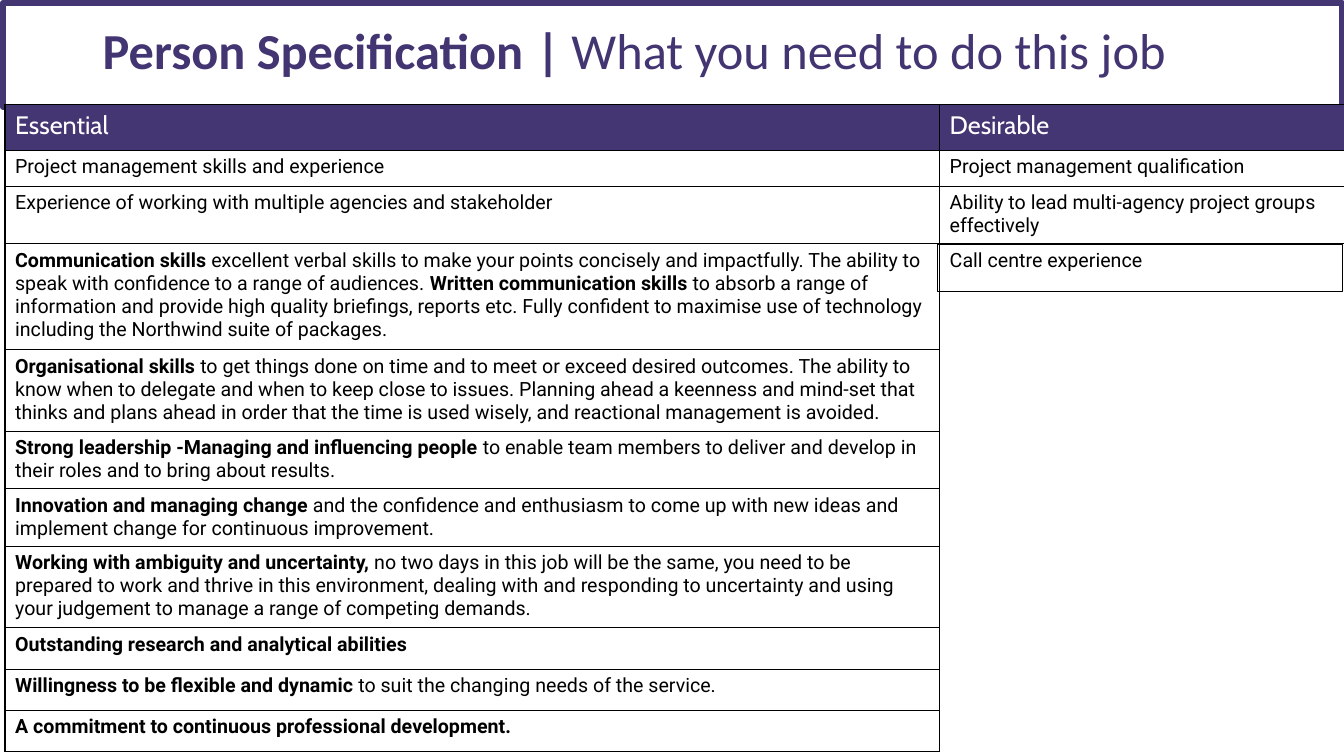
from dataclasses import dataclass

from lxml import etree
from pptx import Presentation
from pptx import util as u
from pptx.dml.color import RGBColor
from pptx.enum import shapes, text
from pptx.oxml.ns import qn


@dataclass(frozen=True)
class Theme:
    title_ink: str = "433472"
    purple: str = "443673"
    black: str = "000000"
    white: str = "FFFFFF"
    title_font: str = "Calibri"
    head_font: str = "Cabin"
    body_font: str = "Roboto"
    title_size: int = 36
    gap_size: int = 40
    head_size: int = 18
    body_size: int = 14


T = Theme()

COLUMNS = [9.27, 4.02]
ROWS = [0.45, 0.36, 0.57, 1.05, 0.81, 0.57, 0.57, 0.81, 0.41, 0.41, 0.41]
HEADINGS = ["Essential", "Desirable"]

# Each requirement is a list of (wording, bold) runs
ESSENTIAL = [
    [("Project management skills and experience", False)],
    [("Experience of working with multiple agencies and stakeholder", False)],
    [("Communication skills ", True),
     ("excellent verbal skills to make your points concisely and impactfully. "
      "The ability to speak with confidence to a range of audiences. ", False),
     ("Written communication skills ", True),
     ("to absorb a range of information and provide high quality briefings, "
      "reports etc. Fully confident to maximise use of technology including "
      "the Northwind suite of packages.", False)],
    [("Organisational skills ", True),
     ("to get things done on time and to meet or exceed desired outcomes. "
      "The ability to know when to delegate and when to keep close to issues. "
      "Planning ahead a keenness and mind-set that thinks and plans ahead in "
      "order that the time is used wisely, and reactional management is "
      "avoided.", False)],
    [("Strong leadership -Managing and influencing people ", True),
     ("to enable team members to deliver and develop in their roles and to "
      "bring about results.", False)],
    [("Innovation and managing change ", True),
     ("and the confidence and enthusiasm to come up with new ideas and "
      "implement change for continuous improvement.", False)],
    [("Working with ambiguity and uncertainty, ", True),
     ("no two days in this job will be the same, you need to be prepared to "
      "work and thrive in this environment, dealing with and responding to "
      "uncertainty and using your judgement to manage a range of competing "
      "demands.", False)],
    [("Outstanding research and analytical abilities", True)],
    [("Willingness to be flexible and dynamic ", True),
     ("to suit the changing needs of the service.", False)],
    [("A commitment to continuous professional development.", True)],
]
DESIRABLE = [
    [("Project management qualification", False)],
    [("Ability to lead multi-agency project groups effectively", False)],
    [("Call centre experience", False)],
]


def add_run(p, wording, font, size, color, bold=False):
    r = p.add_run()
    r.text = wording
    r.font.name = font
    r.font.size = u.Pt(size)
    r.font.bold = bold
    r.font.color.rgb = RGBColor.from_string(color)


def set_borders(cell, sides):
    """Draw 1 pt lines on the given sides (of LRTB) and none elsewhere."""
    tc_pr = cell._tc.get_or_add_tcPr()
    for i, side in enumerate("LRTB"):
        ln = etree.Element(qn("a:ln" + side), w=str(u.Pt(1)))
        if side in sides:
            fill = etree.SubElement(ln, qn("a:solidFill"))
            etree.SubElement(fill, qn("a:srgbClr"), val=T.black)
        else:
            etree.SubElement(ln, qn("a:noFill"))
        tc_pr.insert(i, ln)


def add_outline(slide, x, y, w, h, color, weight):
    sp = slide.shapes.add_shape(shapes.MSO_SHAPE.RECTANGLE, u.Inches(x),
                                u.Inches(y), u.Inches(w), u.Inches(h))
    sp.shadow.inherit = False
    sp.fill.background()
    sp.line.color.rgb = RGBColor.from_string(color)
    sp.line.width = u.Pt(weight)


def add_title(slide, x, y, w, h):
    sp = slide.shapes.add_textbox(u.Inches(x), u.Inches(y),
                                  u.Inches(w), u.Inches(h))
    tf = sp.text_frame
    tf.word_wrap = True
    tf.vertical_anchor = text.MSO_ANCHOR.MIDDLE
    p = tf.paragraphs[0]
    p.line_spacing = 0.9
    main = (T.title_font, T.title_size, T.title_ink)
    add_run(p, "Person Specification", *main, bold=True)
    add_run(p, " ", T.head_font, T.gap_size, T.black)
    add_run(p, "| ", *main, bold=True)
    add_run(p, "What you need to do this job", *main)


def add_criteria(slide, x, y):
    table = slide.shapes.add_table(
        len(ROWS), len(COLUMNS), u.Inches(x), u.Inches(y),
        u.Inches(sum(COLUMNS)), u.Inches(sum(ROWS))).table
    table.first_row = table.horz_banding = False
    for column, width in zip(table.columns, COLUMNS):
        column.width = u.Inches(width)
    for row, height in zip(table.rows, ROWS):
        row.height = u.Inches(height)

    for c, requirements in enumerate([ESSENTIAL, DESIRABLE]):
        # Heading
        head = table.cell(0, c)
        head.fill.solid()
        head.fill.fore_color.rgb = RGBColor.from_string(T.purple)
        set_borders(head, "LRTB")
        add_run(head.text_frame.paragraphs[0], HEADINGS[c],
                T.head_font, T.head_size, T.white)

        # Requirements; the right column is open below its second entry
        for n in range(1, len(ROWS)):
            cell = table.cell(n, c)
            cell.fill.background()
            if c == 0 or n < 3:
                set_borders(cell, "LRTB")
            else:
                set_borders(cell, "LT" if n == 3 else "L")
            if n <= len(requirements):
                for wording, bold in requirements[n - 1]:
                    add_run(cell.text_frame.paragraphs[0], wording,
                            T.body_font, T.body_size, T.black, bold)


def main():
    prs = Presentation()
    prs.slide_width, prs.slide_height = u.Inches(13.33), u.Inches(7.5)
    slide = prs.slides.add_slide(prs.slide_layouts[6])

    add_title(slide, 0.92, -0.22, 11.5, 1.45)
    # Title frame
    add_outline(slide, 0.03, 0.03, 13.28, 1.03, T.purple, 4.5)
    add_criteria(slide, 0.05, 1.04)
    # Box around the last desirable entry
    add_outline(slide, 9.3, 2.42, 4.01, 0.47, T.black, 0.5)

    prs.save("out.pptx")


if __name__ == "__main__":
    main()
